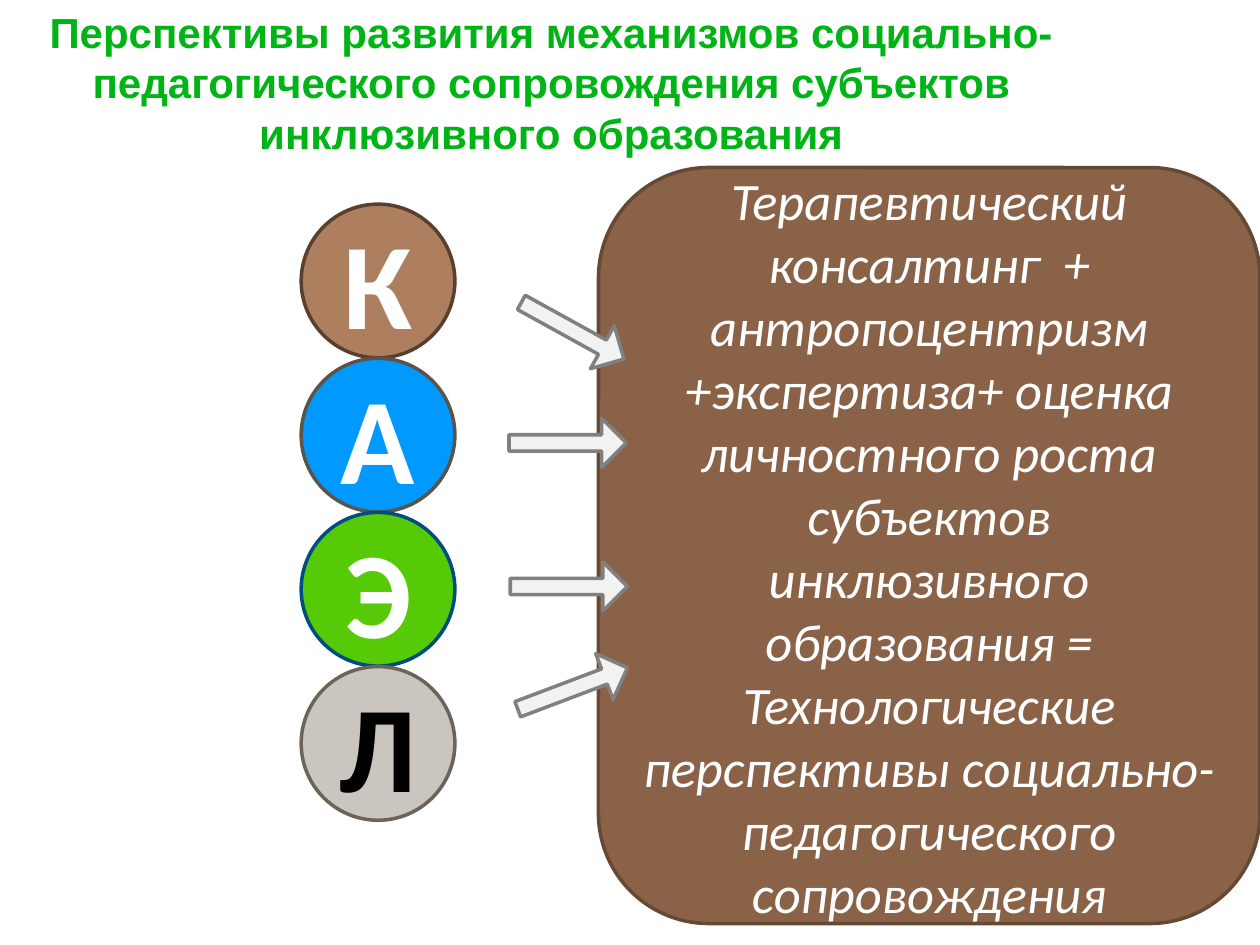
from pptx import Presentation
from pptx.dml.color import RGBColor
from pptx.enum.shapes import MSO_SHAPE
from pptx.enum.text import MSO_ANCHOR, PP_ALIGN
from pptx.util import Inches, Pt

WIDE, HIGH = 10, 7.5
HUES = {
    "title": "00B415", "white": "FFFFFF", "black": "000000",
    "brown": "AD7F5F", "umber": "593F2D",
    "blue": "0099FF", "slate": "5C544B",
    "green": "57CA08", "navy": "004E7F",
    "stone": "CAC5BE", "taupe": "6C6458",
    "panel": "8A6247", "border": "664935",
    "arrow": "F2F2F2", "edge": "808080",
}
DISCS = [
    ("К", "brown", "umber", "white"),
    ("А", "blue", "slate", "white"),
    ("Э", "green", "navy", "white"),
    ("Л", "stone", "taupe", "black"),
]
ARROWS = [(0.04, 0, 28.9), (0, 0.89, 0), (0.01, 2.03, 0), (0.04, 2.84, -20.7)]
TITLE = ("Перспективы развития механизмов социально-педагогического "
         "сопровождения субъектов инклюзивного образования")
GOALS = [
    "Терапевтический консалтинг  + антропоцентризм +экспертиза+ оценка "
    "личностного роста субъектов инклюзивного образования =",
    "Технологические перспективы социально-педагогического сопровождения",
]


def tint(name):
    return RGBColor.from_string(HUES[name])


def write(shape, texts, size, hue, face="Calibri", bold=False, slant=False):
    frame = shape.text_frame
    frame.word_wrap = True
    for i, text in enumerate(texts):
        para = frame.paragraphs[0] if i == 0 else frame.add_paragraph()
        para.alignment = PP_ALIGN.CENTER
        run = para.add_run()
        run.text = text
        font = run.font
        font.name, font.size = face, Pt(size)
        font.bold, font.italic = bold, slant
        font.color.rgb = tint(hue)


def draw(slide, kind, box, fill, line):
    shape = slide.shapes.add_shape(kind, *map(Inches, box))
    shape.shadow.inherit = False
    shape.fill.solid()
    shape.fill.fore_color.rgb = tint(fill)
    shape.line.color.rgb = tint(line)
    shape.line.width = Pt(2)
    shape.text_frame.vertical_anchor = MSO_ANCHOR.MIDDLE
    return shape


def add_title(slide, box):
    write(slide.shapes.add_textbox(*map(Inches, box)), [TITLE], 24, "title",
          face="Arial", bold=True)


def add_discs(slide, box):
    left, top, side, tall = box
    step = (tall - side) / (len(DISCS) - 1)
    for i, (mark, fill, line, hue) in enumerate(DISCS):
        disc = draw(slide, MSO_SHAPE.OVAL,
                    (left, top + i * step, side, side), fill, line)
        write(disc, [mark], 70, hue, bold=True)


def add_panel(slide, box):
    panel = draw(slide, MSO_SHAPE.ROUNDED_RECTANGLE, box, "panel", "border")
    write(panel, GOALS, 30, "white", slant=True)


def add_arrows(slide, box):
    left, top, wide, tall = box
    for dx, dy, turn in ARROWS:
        arrow = draw(slide, MSO_SHAPE.RIGHT_ARROW,
                     (left + dx, top + dy, wide, tall), "arrow", "edge")
        arrow.adjustments[0] = 0.33
        arrow.adjustments[1] = 0.5
        arrow.rotation = turn


def main():
    deck = Presentation()
    deck.slide_width, deck.slide_height = Inches(WIDE), Inches(HIGH)
    slide = deck.slides.add_slide(deck.slide_layouts[6])
    add_title(slide, (0.25, 0, 8.25, 1.31))
    add_discs(slide, (2.39, 1.62, 1.22, 4.89))
    add_panel(slide, (4.75, 1.33, WIDE - 4.75, 0.8 * HIGH))
    add_arrows(slide, (4.04, 2.43, 0.93, 0.39))
    deck.save("out.pptx")


if __name__ == "__main__":
    main()
